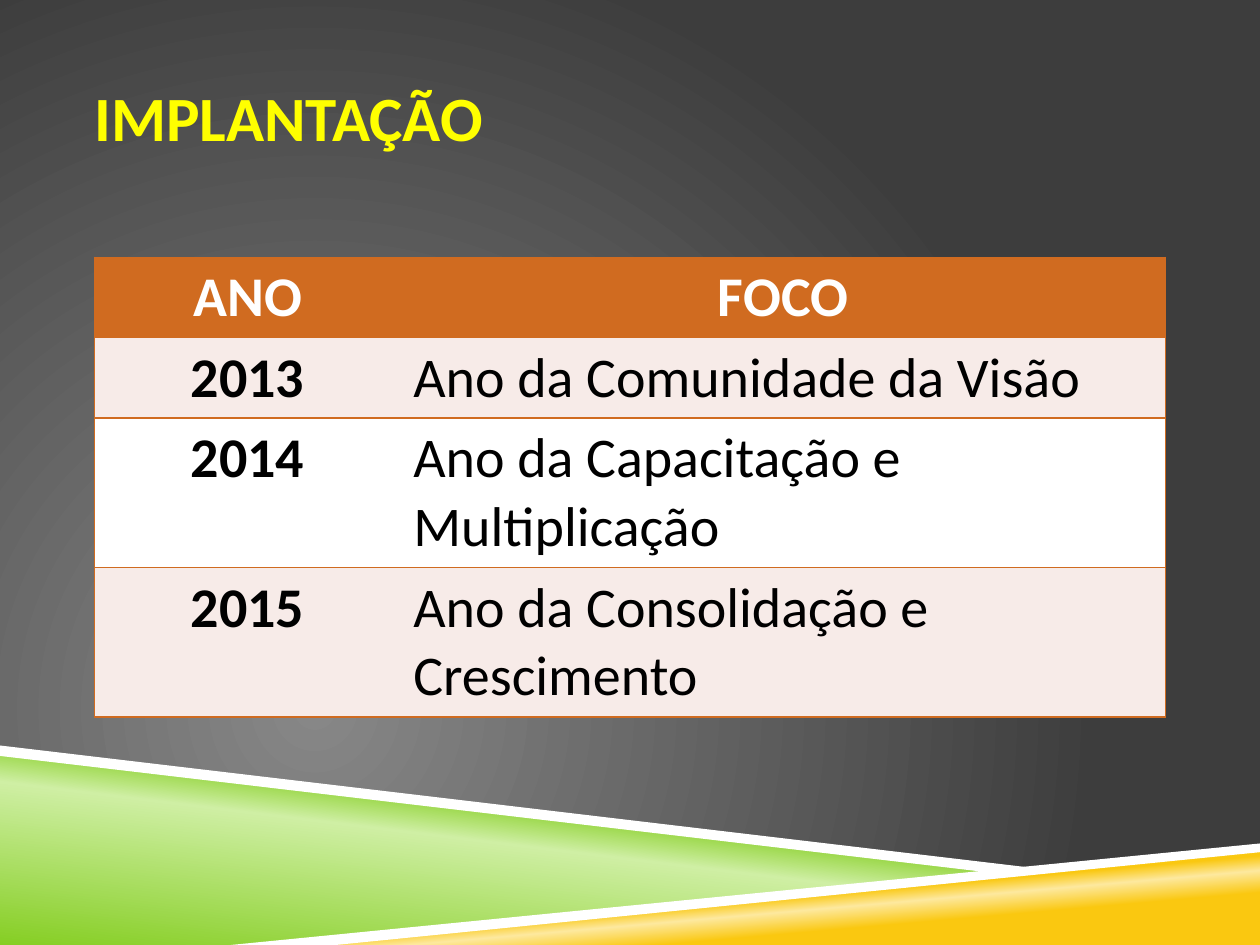
from lxml import etree
from pptx import Presentation
from pptx.dml.color import RGBColor
from pptx.enum import text
from pptx.oxml import ns
from pptx.util import Pt

HEX = {
    "glow": "878787", "dark": "3D3D3D", "green": "86CE24", "lime": "CFEFA4",
    "gold": "FAC810", "cream": "FDE99F", "white": "FFFFFF", "black": "000000",
    "title": "FFFF00", "rust": "D06B20", "blush": "F7EBE8",
}
RGB = {name: RGBColor.from_string(code) for name, code in HEX.items()}


def shade(props, stops, tail):
    """Swap the solid fill in props for a gradient of (percent, colour) stops."""
    marks = "".join(
        f'<a:gs pos="{pos * 1000}"><a:srgbClr val="{HEX[name]}"/></a:gs>'
        for pos, name in stops)
    grad = etree.fromstring(
        f'<a:gradFill {ns.nsdecls("a")} rotWithShape="1">'
        f'<a:gsLst>{marks}</a:gsLst>{tail}</a:gradFill>')
    solid = props.find(ns.qn("a:solidFill"))
    props.replace(solid, grad)


prs = Presentation()
prs.slide_width, prs.slide_height = Pt(720), Pt(540)
slide = prs.slides.add_slide(prs.slide_layouts[6])

# Background: round glow at lower left
slide.background.fill.solid()
back = next(slide.element.iter(ns.qn("p:bgPr")))
shade(back, [(0, "glow"), (100, "dark")],
      '<a:path path="circle"><a:fillToRect l="50000" t="100000" '
      'r="100000" b="50000"/></a:path>')

# Corner wedges and their white edges: points, colour, stops, angle
wedges = [
    ([(0, 429.8), (570.2, 498.2), (144, 540), (0, 540)], "green",
     [(0, "green"), (52, "lime"), (66, "green")], 277),
    ([(142.5, 540), (720, 483.8), (720, 540)], "gold",
     [(28, "gold"), (40, "cream"), (48, "gold")], 265),
    ([(0, 426.2), (0, 432), (568.8, 499), (599, 496.8)], "white", None, 0),
    ([(720, 481.7), (132.5, 540), (191.5, 540), (720, 487.4)], "white", None, 0),
]
for points, name, stops, angle in wedges:
    path = slide.shapes.build_freeform(*points[0], scale=Pt(1))
    path.add_line_segments(points[1:], close=True)
    wedge = path.convert_to_shape()
    wedge.shadow.inherit = False
    wedge.line.fill.background()
    wedge.fill.solid()
    wedge.fill.fore_color.rgb = RGB[name]
    if stops:
        shade(wedge.element.spPr, stops,
              f'<a:lin ang="{angle * 60000}" scaled="0"/>')

# Title
box = slide.shapes.add_textbox(Pt(54), Pt(21.6), Pt(612), Pt(90))
frame = box.text_frame
frame.word_wrap = True
frame.vertical_anchor = text.MSO_ANCHOR.MIDDLE
frame.margin_left = frame.margin_right = 0
frame.text = "IMPLANTAÇÃO"
font = frame.paragraphs[0].font
font.name, font.size, font.bold = "Calibri", Pt(36), True
font.color.rgb = RGB["title"]

# Table of years and focus
rows = [
    ("ANO", "FOCO", 46, "rust"),
    ("2013", "Ano da Comunidade da Visão", 46, "blush"),
    ("2014", "Ano da Capacitação e Multiplicação", 85.4, "white"),
    ("2015", "Ano da Consolidação e Crescimento", 85.4, "blush"),
]
high = sum(row[2] for row in rows)
table = slide.shapes.add_table(
    len(rows), 2, Pt(54), Pt(147), Pt(612), Pt(high)).table
table.horz_banding = False
for column, width in zip(table.columns, (175, 437)):
    column.width = Pt(width)

for r, (year, focus, height, fill) in enumerate(rows):
    table.rows[r].height = Pt(height)
    for c, words in enumerate((year, focus)):
        cell = table.cell(r, c)
        cell.text = words
        cell.fill.solid()
        cell.fill.fore_color.rgb = RGB[fill]
        para = cell.text_frame.paragraphs[0]
        if r == 0 or c == 0:
            para.alignment = text.PP_ALIGN.CENTER
        font = para.font
        font.name, font.size = "Calibri", Pt(32)
        font.bold = r == 0 or c == 0
        font.color.rgb = RGB["black" if r else "white"]

        # Rust borders all round, none between the columns
        inner = "R" if c == 0 else "L"
        props = cell._tc.get_or_add_tcPr()
        for i, side in enumerate("LRTB"):
            paint = ("<a:noFill/>" if side == inner else
                     f'<a:solidFill><a:srgbClr val="{HEX["rust"]}"/></a:solidFill>')
            props.insert(i, etree.fromstring(
                f'<a:ln{side} {ns.nsdecls("a")} w="12700">{paint}</a:ln{side}>'))

prs.save("out.pptx")
